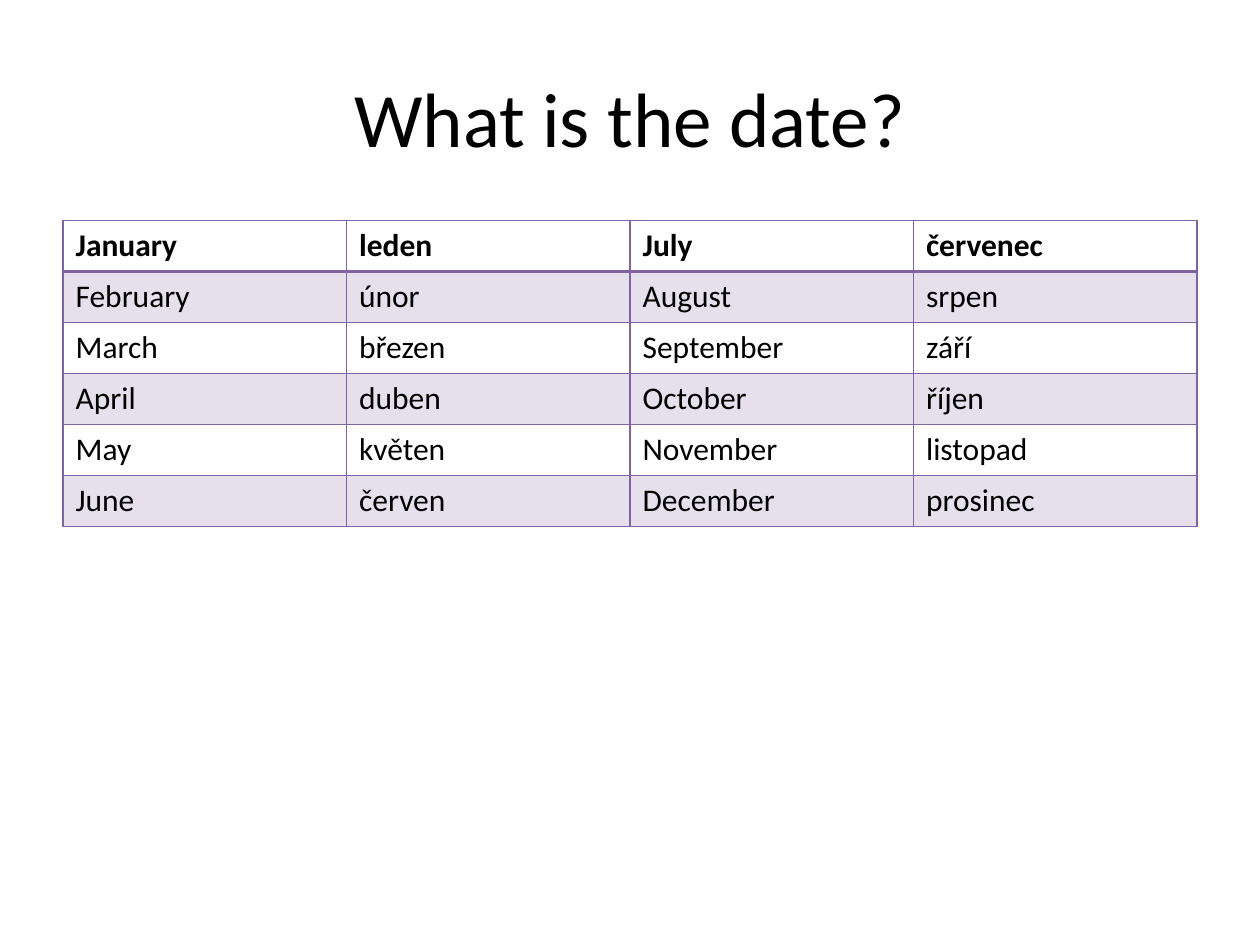
from lxml.etree import SubElement
from pptx import Presentation
from pptx.dml.color import RGBColor
from pptx.enum.text import MSO_ANCHOR, PP_ALIGN
from pptx.oxml.ns import qn
from pptx.util import Pt

SCALE = 914400 // 200  # EMU in one px, 200 px to the inch
COLORS = {"text": "000000", "violet": "8064A2"}
TINT = 20  # percent opacity of the banded rows

MONTHS = [
    ("January", "leden", "July", "červenec"),
    ("February", "únor", "August", "srpen"),
    ("March", "březen", "September", "září"),
    ("April", "duben", "October", "říjen"),
    ("May", "květen", "November", "listopad"),
    ("June", "červen", "December", "prosinec"),
]


def emu(*sizes):
    return [size * SCALE for size in sizes]


class Page:
    """Holds the style and the current slide."""

    font = "Calibri"

    def __init__(self, slide):
        self.slide = slide

    def label(self, frame, text, size, bold=False, align=PP_ALIGN.LEFT):
        para = frame.paragraphs[0]
        para.alignment = align
        run = para.add_run()
        run.text = text
        style = {"name": self.font, "size": Pt(size), "bold": bold}
        for key, value in style.items():
            setattr(run.font, key, value)
        run.font.color.rgb = RGBColor.from_string(COLORS["text"])

    def title(self, text, left, top, width, height):
        box = self.slide.shapes.add_textbox(*emu(left, top, width, height))
        box.text_frame.word_wrap = True
        box.text_frame.vertical_anchor = MSO_ANCHOR.MIDDLE
        self.label(box.text_frame, text, 44, align=PP_ALIGN.CENTER)

    def border(self, cell, widths):
        props = cell._tc.get_or_add_tcPr()
        for side, width in widths.items():
            line = SubElement(props, qn(f"a:ln{side}"), w=str(int(Pt(width))))
            fill = SubElement(line, qn("a:solidFill"))
            SubElement(fill, qn("a:srgbClr"), val=COLORS["violet"])

    def tint(self, cell):
        cell.fill.solid()
        cell.fill.fore_color.rgb = RGBColor.from_string(COLORS["violet"])
        color = cell._tc.tcPr.find(qn("a:solidFill")).find(qn("a:srgbClr"))
        SubElement(color, qn("a:alpha"), val=str(TINT * 1000))

    def table(self, data, left, top, width, step):
        area = emu(left, top, width, step * len(data))
        table = self.slide.shapes.add_table(len(data), len(data[0]), *area).table
        table.horz_banding = False
        for i, row in enumerate(data):
            # The rule below the header is twice as thick
            widths = {"L": 1, "R": 1, "T": 2 if i == 1 else 1, "B": 2 if i == 0 else 1}
            for j, text in enumerate(row):
                cell = table.cell(i, j)
                self.label(cell.text_frame, text, 18, bold=i == 0)
                self.border(cell, widths)
                if i % 2:
                    self.tint(cell)
                else:
                    cell.fill.background()


def main():
    deck = Presentation()
    deck.slide_width, deck.slide_height = emu(2000, 1500)
    page = Page(deck.slides.add_slide(deck.slide_layouts[6]))

    # Heading
    page.title("What is the date?", 100, 60, 1800, 250)

    # Months in English and Czech
    page.table(MONTHS, 100, 350, 1800, 81)

    deck.save("out.pptx")


if __name__ == "__main__":
    main()
